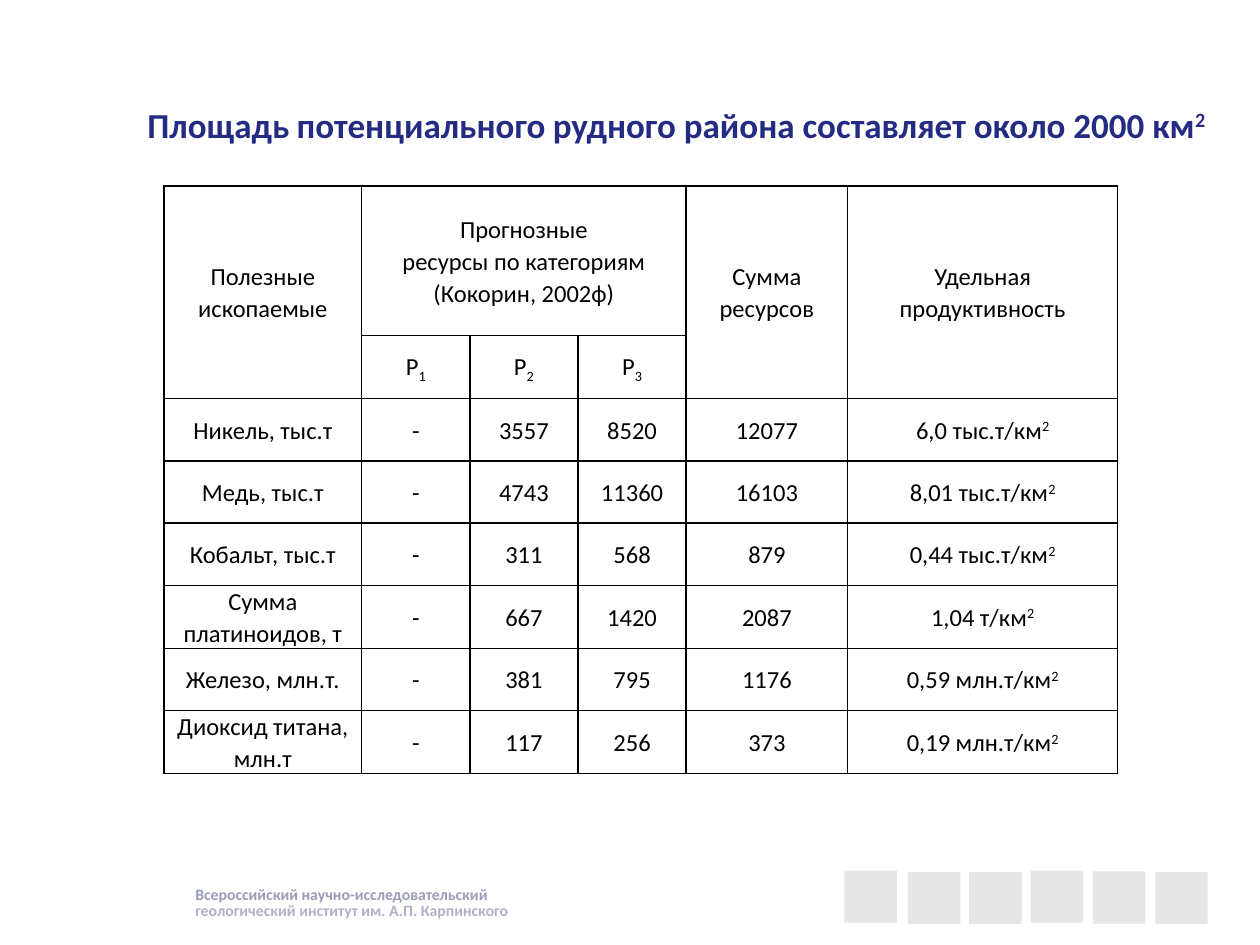
from lxml import etree
from pptx import Presentation
from pptx.dml.color import RGBColor
from pptx.enum import shapes, text
from pptx.oxml import ns
from pptx.util import Pt

FONT = "Calibri"
HEADERS = {
    (0, 0): "Полезные ископаемые",
    (0, 1): "Прогнозные\nресурсы по категориям\n(Кокорин, 2002ф)",
    (0, 4): "Сумма ресурсов",
    (0, 5): "Удельная продуктивность",
    (1, 1): "Р_1",
    (1, 2): "Р_2",
    (1, 3): "Р_3",
}
RESOURCES = [
    ("Никель, тыс.т", "-", "3557", "8520", "12077", "6,0 тыс.т/км^2"),
    ("Медь, тыс.т", "-", "4743", "11360", "16103", "8,01 тыс.т/км^2"),
    ("Кобальт, тыс.т", "-", "311", "568", "879", "0,44 тыс.т/км^2"),
    ("Сумма платиноидов, т", "-", "667", "1420", "2087", "1,04 т/км^2"),
    ("Железо, млн.т.", "-", "381", "795", "1176", "0,59 млн.т/км^2"),
    ("Диоксид титана, млн.т", "-", "117", "256", "373", "0,19 млн.т/км^2"),
]
MERGES = [((0, 0), (1, 0)), ((0, 1), (0, 3)), ((0, 4), (1, 4)), ((0, 5), (1, 5))]
COL_WIDTHS = [113, 61.8, 61.8, 61.8, 92.3, 154.3]
ROW_HEIGHTS = [85.5] + [35.6] * 7
SQUARES = [(482.5, 497.5), (518.8, 498.3), (553.8, 498.3),
           (589, 497.5), (624.5, 498), (660.2, 498.3)]


def color(value):
    return RGBColor.from_string(value)


def add_run(p, content, size, hex_color, bold=False, baseline=0):
    r = p.add_run()
    r.text = content
    r.font.name = FONT
    r.font.size = Pt(size)
    r.font.bold = bold
    r.font.color.rgb = color(hex_color)
    if baseline:
        r.font._element.set("baseline", str(baseline * 1000))


def add_marked_text(p, content, size, hex_color, bold=False):
    mark, baseline = ("_", -25) if "_" in content else ("^", 30)
    base, _, index = content.partition(mark)
    add_run(p, base, size, hex_color, bold)
    if index:
        add_run(p, index, size, hex_color, bold, baseline)


def set_title(s):
    sp = s.shapes.title
    sp.left, sp.top, sp.width, sp.height = Pt(77), Pt(55.5), Pt(624), Pt(31.5)
    tf = sp.text_frame
    tf.word_wrap = False
    tf.auto_size = text.MSO_AUTO_SIZE.SHAPE_TO_FIT_TEXT
    tf.vertical_anchor = text.MSO_ANCHOR.TOP
    p = tf.paragraphs[0]
    p.alignment = text.PP_ALIGN.LEFT
    for part in ("Площадь", " ", "потенциального", " ",
                 "рудного района составляет около 2000 км^2"):
        add_marked_text(p, part, 18 if part == " " else 20, "232C82", True)


def add_footer_line(s, content, top, width, hex_color):
    sp = s.shapes.add_textbox(Pt(104.5), Pt(top), Pt(width), Pt(18))
    tf = sp.text_frame
    tf.word_wrap = False
    tf.auto_size = text.MSO_AUTO_SIZE.SHAPE_TO_FIT_TEXT
    add_run(tf.paragraphs[0], content, 9, hex_color, True)


def add_square(s, left, top):
    sp = s.shapes.add_shape(shapes.MSO_SHAPE.RECTANGLE,
                            Pt(left), Pt(top), Pt(30), Pt(29.8))
    sp.shadow.inherit = False
    sp.line.fill.background()
    sp.fill.solid()
    sp.fill.fore_color.rgb = color("D9D9D9")
    clr = sp._element.spPr.find(".//" + ns.qn("a:srgbClr"))
    etree.SubElement(clr, ns.qn("a:alpha"), val="65000")


def set_borders(cell):
    tc_pr = cell._tc.get_or_add_tcPr()
    for side in ("lnL", "lnR", "lnT", "lnB"):
        ln = etree.SubElement(tc_pr, ns.qn("a:" + side), w=str(Pt(1)))
        fill = etree.SubElement(ln, ns.qn("a:solidFill"))
        etree.SubElement(fill, ns.qn("a:srgbClr"), val="000000")


def format_cell(cell):
    set_borders(cell)
    cell.fill.background()
    cell.vertical_anchor = text.MSO_ANCHOR.MIDDLE
    cell.margin_left = cell.margin_right = Pt(5)
    cell.margin_top = cell.margin_bottom = Pt(0)


def fill_cell(cell, content):
    tf = cell.text_frame
    for i, line in enumerate(content.split("\n")):
        p = tf.add_paragraph() if i else tf.paragraphs[0]
        p.alignment = text.PP_ALIGN.CENTER
        p.line_spacing = 1.07
        add_marked_text(p, line, 14, "000000")


def add_resource_table(s):
    table = s.shapes.add_table(
        len(ROW_HEIGHTS), len(COL_WIDTHS), Pt(93.7), Pt(106.3),
        Pt(sum(COL_WIDTHS)), Pt(sum(ROW_HEIGHTS))).table
    table.first_row = table.horz_banding = False
    for column, width in zip(table.columns, COL_WIDTHS):
        column.width = Pt(width)
    for row, height in zip(table.rows, ROW_HEIGHTS):
        row.height = Pt(height)
    for cell in table.iter_cells():
        format_cell(cell)
    for first, last in MERGES:
        table.cell(*first).merge(table.cell(*last))
    for position, content in HEADERS.items():
        fill_cell(table.cell(*position), content)
    for i, values in enumerate(RESOURCES, start=2):
        for j, content in enumerate(values):
            fill_cell(table.cell(i, j), content)


def main():
    prs = Presentation()
    prs.slide_width, prs.slide_height = Pt(720), Pt(540)
    s = prs.slides.add_slide(prs.slide_layouts[5])
    set_title(s)
    add_footer_line(s, "геологический институт им. А.П. Карпинского", 511.3, 195, "B0B1C6")
    add_footer_line(s, "Всероссийский научно-исследовательский", 502, 183.5, "9A9CBB")
    for left, top in SQUARES:
        add_square(s, left, top)
    add_resource_table(s)
    prs.save("out.pptx")


if __name__ == "__main__":
    main()
